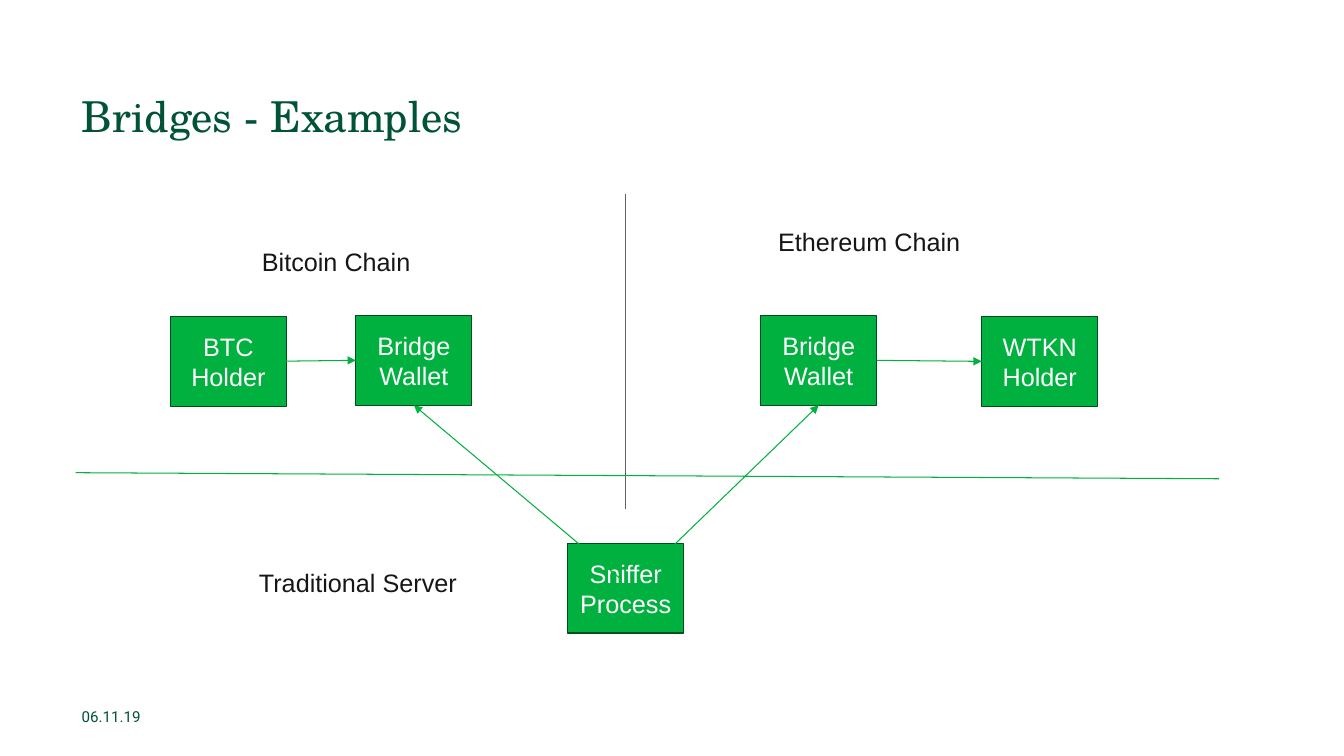
from lxml import etree
from pptx import Presentation
from pptx.dml.color import RGBColor
from pptx.enum.shapes import MSO_CONNECTOR, MSO_SHAPE
from pptx.enum.text import MSO_ANCHOR, MSO_AUTO_SIZE, PP_ALIGN
from pptx.oxml.ns import qn
from pptx.util import Inches, Pt

STRAIGHT, RECT = MSO_CONNECTOR.STRAIGHT, MSO_SHAPE.RECTANGLE
TOP, MIDDLE = MSO_ANCHOR.TOP, MSO_ANCHOR.MIDDLE
LEFT, CENTER = PP_ALIGN.LEFT, PP_ALIGN.CENTER
NO_FIT, FIT_SHAPE = MSO_AUTO_SIZE.NONE, MSO_AUTO_SIZE.SHAPE_TO_FIT_TEXT
SIDE_LEFT, SIDE_BOTTOM, SIDE_RIGHT = 1, 2, 3

COLORS = {"green": "00B140", "edge": "004E1C", "title": "005336",
          "text": "171616", "white": "FFFFFF", "gray": "606060"}
TITLE = ("Bridges - Examples", (5.33, 12, 86.27, 10.27))
DATE = ("06.11.19", (5.33, 92.13, 22.51, 5.33))
BOX_W, BOX_H = 8.63, 11.87
BOXES = {
    "btc_wallet": ("Bridge Wallet", 26.48, 41.73),
    "sniffer": ("Sniffer Process", 42.24, 71.87),
    "eth_wallet": ("Bridge Wallet", 56.6, 41.73),
    "btc_holder": ("BTC Holder", 12.68, 41.87),
    "token_holder": ("WTKN Holder", 73.05, 41.87),
}
ARROWS = [
    ((16.58, 47.87), ("btc_wallet", SIDE_LEFT)),
    (("eth_wallet", SIDE_RIGHT), ("token_holder", SIDE_LEFT)),
    ((46.06, 76.4), ("btc_wallet", SIDE_BOTTOM)),
    ((49.66, 72.93), ("eth_wallet", SIDE_BOTTOM)),
]
DIVIDERS = [((46.51, 25.6), (46.51, 67.33), "gray"),
            ((5.63, 62.53), (90.7, 63.33), "green")]
LABELS = [("Traditional Server", 18.53, 74.4, 16.35),
          ("Ethereum Chain", 57.16, 29.25, 15.23),
          ("Bitcoin Chain", 18.75, 31.95, 12.68)]
LABEL_H = 5.33

prs = Presentation()
prs.slide_width, prs.slide_height = Inches(13.33), Inches(7.5)
s = prs.slides.add_slide(prs.slide_layouts[5])


def color(name):
    return RGBColor.from_string(COLORS[name])


def point(x, y):
    return int(prs.slide_width * x / 100), int(prs.slide_height * y / 100)


def area(x, y, w, h):
    return point(x, y) + point(w, h)


def write(sp, text, size, font, ink, align=LEFT, anchor=TOP, wrap=True):
    tf = sp.text_frame
    tf.word_wrap, tf.vertical_anchor = wrap, anchor
    p = tf.paragraphs[0]
    p.alignment = align
    r = p.add_run()
    r.text = text
    r.font.size, r.font.name = Pt(size), font
    r.font.color.rgb = color(ink)
    return p


def add_line(start, end, ink, arrow=False):
    ln = s.shapes.add_connector(STRAIGHT, *start, *end)
    ln.line.color.rgb, ln.line.width = color(ink), Pt(0.75)
    if arrow:
        tail = etree.SubElement(ln.line._get_or_add_ln(), qn("a:tailEnd"))
        tail.set("type", "triangle")
    etree.SubElement(ln._element.spPr, qn("a:effectLst"))
    return ln


title = s.shapes.title
title.left, title.top, title.width, title.height = area(*TITLE[1])
p = write(title, TITLE[0], 30.4, "TeX Gyre Schola", "title")
p.line_spacing = 0.9
title.text_frame.auto_size = NO_FIT

date = s.shapes.add_textbox(*area(*DATE[1]))
write(date, DATE[0], 10.8, "Roboto", "title", anchor=MIDDLE)

boxes = {}
for name, (text, x, y) in BOXES.items():
    sp = s.shapes.add_shape(RECT, *area(x, y, BOX_W, BOX_H))
    sp.shadow.inherit = False
    sp.fill.solid()
    sp.fill.fore_color.rgb = color("green")
    sp.line.color.rgb, sp.line.width = color("edge"), Pt(0.85)
    write(sp, text, 18, "Arial", "white", CENTER, MIDDLE)
    boxes[name] = sp

for start, (target, side) in ARROWS:
    joined = start[0] in boxes
    ln = add_line((0, 0) if joined else point(*start), (0, 0), "green", True)
    if joined:
        ln.begin_connect(boxes[start[0]], start[1])
    ln.end_connect(boxes[target], side)

for start, end, ink in DIVIDERS:
    add_line(point(*start), point(*end), ink)

for text, x, y, w in LABELS:
    label = s.shapes.add_textbox(*area(x, y, w, LABEL_H))
    write(label, text, 18, "Arial", "text", wrap=False)
    label.text_frame.auto_size = FIT_SHAPE

prs.save("out.pptx")
